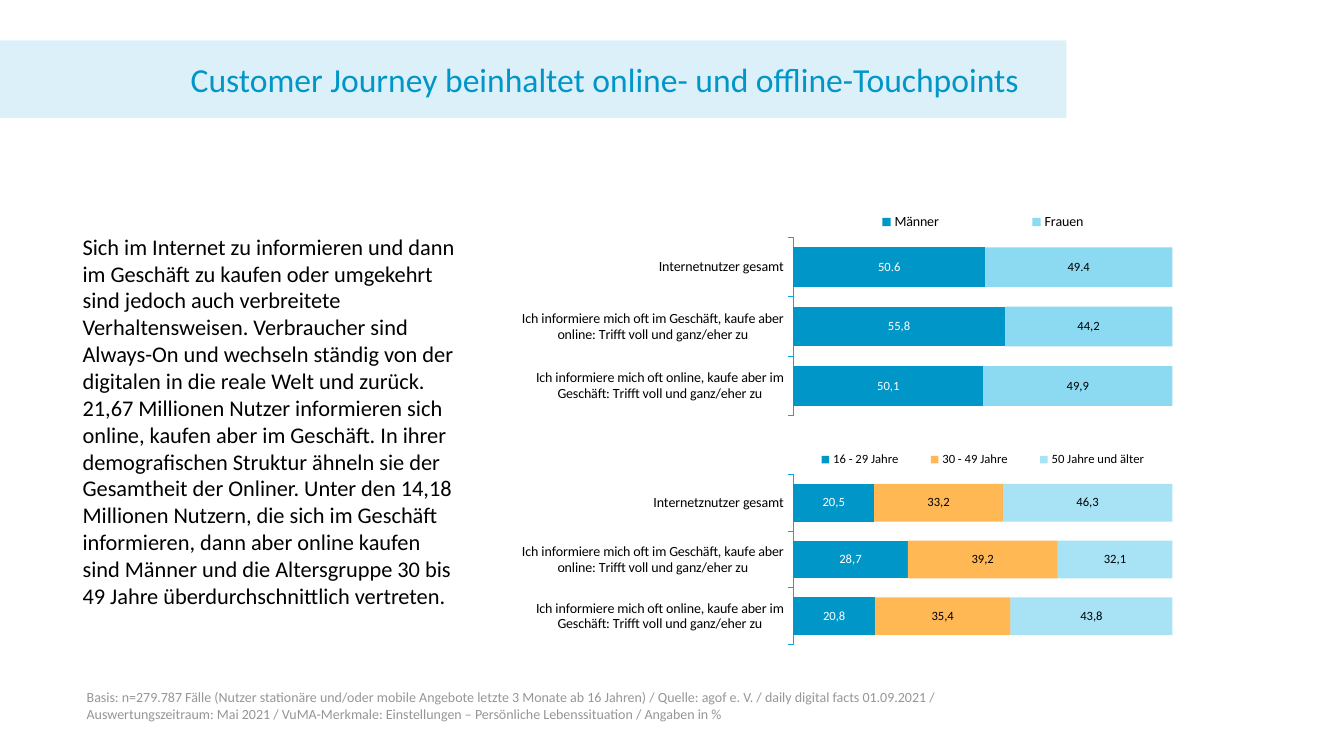
from dataclasses import dataclass

from lxml import etree
from pptx import Presentation
from pptx.chart.data import CategoryChartData
from pptx.dml.color import RGBColor
from pptx.enum.chart import XL_CHART_TYPE, XL_LEGEND_POSITION, XL_TICK_MARK
from pptx.enum.text import MSO_ANCHOR, MSO_AUTO_SIZE, PP_ALIGN
from pptx.oxml.ns import qn
from pptx.util import Pt

STACKED_BARS = XL_CHART_TYPE.BAR_STACKED_100
LEGEND_TOP = XL_LEGEND_POSITION.TOP
TICK_OUTSIDE, TICK_NONE = XL_TICK_MARK.OUTSIDE, XL_TICK_MARK.NONE
TOP, MIDDLE = MSO_ANCHOR.TOP, MSO_ANCHOR.MIDDLE
LEFT, RIGHT = PP_ALIGN.LEFT, PP_ALIGN.RIGHT
NO_AUTOFIT = MSO_AUTO_SIZE.NONE
TWO_CONTENT_LAYOUT = 3


@dataclass(frozen=True)
class Theme:
    font: str = "Calibri"
    blue: str = "0096C8"
    cyan: str = "00ADE4"
    orange: str = "FF9600"
    banner: str = "DCF0FA"
    black: str = "000000"
    white: str = "FFFFFF"
    grey: str = "969696"
    title_size: float = 24
    body_size: float = 16
    small_size: float = 10
    chart_size: float = 9


THEME = Theme()

HEADLINE = "Customer Journey beinhaltet online- und offline-Touchpoints"
# \v is a line break inside the paragraph
STORY = (
    "Sich im Internet zu informieren und dann im Geschäft zu kaufen oder umgekehrt "
    "sind jedoch auch verbreitete Verhaltensweisen. Verbraucher sind Always-On und "
    "wechseln ständig von der digitalen in die reale Welt und zurück. \v"
    "21,67 Millionen Nutzer informieren sich online, kaufen aber im Geschäft. In ihrer "
    "demografischen Struktur ähneln sie der Gesamtheit der Onliner. Unter den 14,18 "
    "Millionen Nutzern, die sich im Geschäft informieren, dann aber online kaufen sind "
    "Männer und die Altersgruppe 30 bis 49 Jahre überdurchschnittlich vertreten."
)
SOURCE_NOTE = (
    "Basis: n=279.787 Fälle (Nutzer stationäre und/oder mobile Angebote letzte 3 Monate "
    "ab 16 Jahren) / Quelle: agof e. V. / daily digital facts 01.09.2021 / "
    "Auswertungszeitraum: Mai 2021 / VuMA-Merkmale: Einstellungen – Persönliche "
    "Lebenssituation / Angaben in %"
)
BEHAVIOURS = [
    "Ich informiere mich oft im Geschäft, kaufe aber online: Trifft voll und ganz/eher zu",
    "Ich informiere mich oft online, kaufe aber im Geschäft: Trifft voll und ganz/eher zu",
]
# Series: name, values, label texts (None shows the value), fill, opacity in %, label colour
GENDER = [
    ("Männer", (50.6, 55.8, 50.1), (None, "55,8", "50,1"), THEME.blue, 100, THEME.white),
    ("Frauen", (49.4, 44.2, 49.9), (None, "44,2", "49,9"), THEME.cyan, 45, THEME.black),
]
AGE = [
    ("16 - 29 Jahre", (21.3, 30.1, 21.5), ("20,5", "28,7", "20,8"),
     THEME.blue, 100, THEME.white),
    ("30 - 49 Jahre", (34, 39.6, 35.8), ("33,2", "39,2", "35,4"),
     THEME.orange, 67, THEME.black),
    ("50 Jahre und älter", (44.7, 30.2, 42.7), ("46,3", "32,1", "43,8"),
     THEME.cyan, 34, THEME.black),
]


def style_font(font, size, color):
    font.name = THEME.font
    font.size = Pt(size)
    font.bold = False
    font.color.rgb = RGBColor.from_string(color)


def fill_placeholder(placeholder, box, text, size, color, anchor=TOP, align=LEFT):
    placeholder.left, placeholder.top, placeholder.width, placeholder.height = map(Pt, box)
    frame = placeholder.text_frame
    frame.text = text
    frame.word_wrap = True
    frame.auto_size = NO_AUTOFIT
    frame.vertical_anchor = anchor
    paragraph = frame.paragraphs[0]
    properties = paragraph._p.get_or_add_pPr()
    properties.set("marL", "0")
    properties.set("indent", "0")
    paragraph.alignment = align
    paragraph.line_spacing = 1.0
    paragraph.space_before = Pt(0)
    etree.SubElement(properties, qn("a:buNone"))
    style_font(paragraph.font, size, color)


def shape_banner(title):
    """Give the title a filled outline with fully rounded ends."""
    geometry = etree.Element(qn("a:prstGeom"), prst="roundRect")
    adjustments = etree.SubElement(geometry, qn("a:avLst"))
    etree.SubElement(adjustments, qn("a:gd"), name="adj", fmla="val 50000")
    title._element.spPr.find(qn("a:xfrm")).addnext(geometry)
    title.fill.solid()
    title.fill.fore_color.rgb = RGBColor.from_string(THEME.banner)
    title.text_frame.margin_right = Pt(34)


def manual_layout(x, y, w, h, inner=False):
    layout = etree.Element(qn("c:layout"))
    manual = etree.SubElement(layout, qn("c:manualLayout"))
    if inner:
        etree.SubElement(manual, qn("c:layoutTarget"), val="inner")
    for mode in ("xMode", "yMode"):
        etree.SubElement(manual, qn("c:" + mode), val="edge")
    for key, value in zip("xywh", (x, y, w, h)):
        etree.SubElement(manual, qn("c:" + key), val=str(value))
    return layout


def style_series(series, labels, color, opacity, label_color):
    fill = series.format.fill
    fill.solid()
    fill.fore_color.rgb = RGBColor.from_string(color)
    if opacity < 100:
        srgb = series._element.spPr.find(".//" + qn("a:srgbClr"))
        etree.SubElement(srgb, qn("a:alpha"), val=str(opacity * 1000))
    data_labels = series.data_labels
    data_labels.show_value = True
    data_labels.number_format = "#,##0.0"
    data_labels.number_format_is_linked = False
    style_font(data_labels.font, THEME.chart_size, label_color)
    for index, label in enumerate(labels):
        if label:
            run = series.points[index].data_label.text_frame.paragraphs[0].add_run()
            run.text = label
            style_font(run.font, THEME.chart_size, label_color)


def add_share_chart(slide, box, total_name, groups, legend_size):
    data = CategoryChartData(number_format="0.0")
    data.categories = [total_name] + BEHAVIOURS
    for name, values, *_ in groups:
        data.add_series(name, values)
    chart = slide.shapes.add_chart(STACKED_BARS, *map(Pt, box), data).chart
    style_font(chart.font, THEME.chart_size, THEME.black)
    chart.has_title = False

    # Bars and labels
    plot = chart.plots[0]
    plot.gap_width = 50
    plot.overlap = 100
    plot.vary_by_categories = False
    for series, (_, _, *style) in zip(plot.series, groups):
        style_series(series, *style)

    # Axes
    behaviours = chart.category_axis
    behaviours.reverse_order = True
    behaviours.major_tick_mark = TICK_OUTSIDE
    behaviours.minor_tick_mark = TICK_NONE
    behaviours.has_major_gridlines = False
    behaviours.format.line.color.rgb = RGBColor.from_string(THEME.cyan)
    behaviours.format.line.width = Pt(0.75)
    style_font(behaviours.tick_labels.font, THEME.small_size, THEME.black)
    chart.value_axis.visible = False
    chart.value_axis.has_major_gridlines = False

    # Legend and plot placement
    chart.has_legend = True
    legend = chart.legend
    legend.position = LEGEND_TOP
    legend.include_in_layout = False
    style_font(legend.font, legend_size, THEME.black)
    legend._element.find(qn("c:legendPos")).addnext(manual_layout(0.42, 0.06, 0.58, 0.12))
    plot_area = chart._chartSpace.chart.plotArea
    for layout in plot_area.findall(qn("c:layout")):
        plot_area.remove(layout)
    plot_area.insert(0, manual_layout(0.42, 0.19, 0.58, 0.81, inner=True))


def main():
    presentation = Presentation()
    presentation.slide_width, presentation.slide_height = Pt(960), Pt(540)
    slide = presentation.slides.add_slide(presentation.slide_layouts[TWO_CONTENT_LAYOUT])
    headline, story, source_note = list(slide.placeholders)[:3]

    # Texts
    fill_placeholder(headline, (-97, 28.8, 858.8, 55.4), HEADLINE,
                     THEME.title_size, THEME.blue, MIDDLE, RIGHT)
    shape_banner(headline)
    fill_placeholder(story, (51.8, 140.4, 283.7, 320.4), STORY,
                     THEME.body_size, THEME.black, MIDDLE)
    fill_placeholder(source_note, (54.7, 488.2, 678.2, 28.8), SOURCE_NOTE,
                     THEME.small_size, THEME.grey)

    # Charts
    add_share_chart(slide, (370.8, 139.7, 466.6, 157.7), "Internetnutzer gesamt",
                    GENDER, THEME.small_size)
    add_share_chart(slide, (370.8, 310.3, 466.6, 150.5), "Internetznutzer gesamt",
                    AGE, THEME.chart_size)

    presentation.save("out.pptx")


if __name__ == "__main__":
    main()
